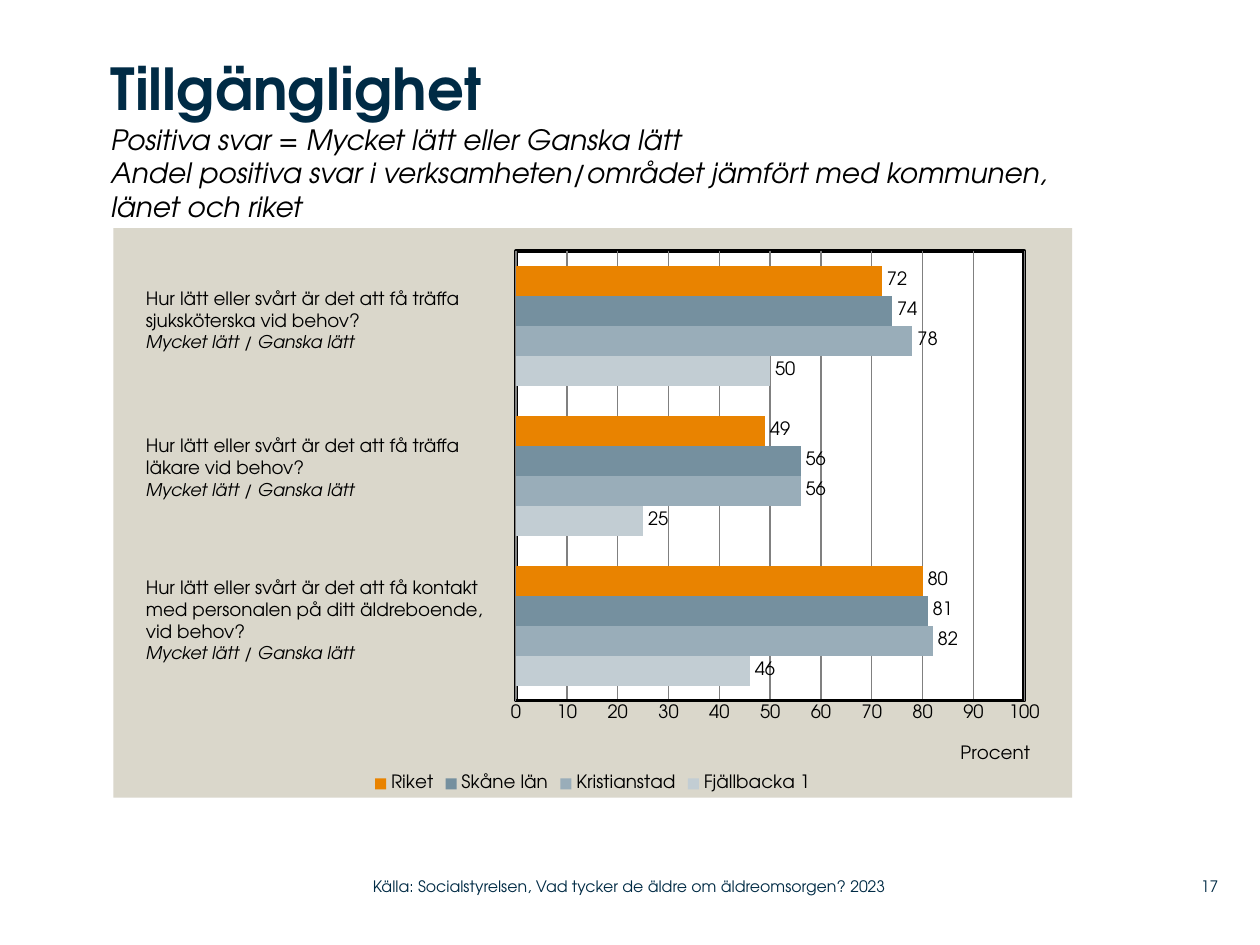
from dataclasses import dataclass

from lxml import etree
from pptx import Presentation
from pptx.chart.data import CategoryChartData
from pptx.dml.color import RGBColor
from pptx.enum.chart import XL_CHART_TYPE as ChartType
from pptx.enum.chart import XL_LABEL_POSITION as LabelPosition
from pptx.enum.chart import XL_LEGEND_POSITION as LegendPosition
from pptx.enum.chart import XL_TICK_MARK as TickMark
from pptx.enum.text import MSO_ANCHOR as Anchor
from pptx.enum.text import PP_ALIGN as Align
from pptx.oxml import parse_xml
from pptx.oxml.ns import nsdecls, qn
from pptx.util import Pt

PX = 9144  # 100 px to the inch


@dataclass(frozen=True)
class Style:
    size: float
    color: str = "000000"
    bold: bool = False
    italic: bool = False


class Theme:
    font = "TeX Gyre Adventor"
    black, white, grid, panel = "000000", "FFFFFF", "808080", "DAD7CB"
    title = Style(33, "002B45", bold=True)
    subtitle = Style(16, italic=True)
    body = Style(10.5)
    answer = Style(10, italic=True)
    footer = Style(9, "002B45")


SERIES = [
    ("Fjällbacka 1", (46, 25, 50), "C2CDD3"),
    ("Kristianstad", (82, 56, 78), "99ADB9"),
    ("Skåne län", (81, 56, 74), "75909F"),
    ("Riket", (80, 49, 72), "E98300"),
]
QUESTIONS = [
    ((16, 42, 299, 81),
     ["Hur lätt eller svårt är det att få träffa sjuksköterska vid behov?"]),
    ((16, 159, 299, 81),
     ["Hur lätt eller svårt är det att få träffa", "läkare vid behov?"]),
    ((16, 271, 301, 98),
     ["Hur lätt eller svårt är det att få kontakt",
      "med personalen på ditt äldreboende,", "vid behov?"]),
]
ANSWER = "Mycket lätt / Ganska lätt"


def rgb(color):
    return RGBColor.from_string(color)


def emu(box):
    return [length * PX for length in box]


def apply_font(font, style):
    font.name = Theme.font
    font.size = Pt(style.size)
    font.bold = style.bold
    font.italic = style.italic
    font.color.rgb = rgb(style.color)


def add_text(slide, box, lines, inset=True, anchor=Anchor.TOP, align=Align.LEFT):
    """Add a text box with one paragraph for each (text, style) pair."""
    frame = slide.shapes.add_textbox(*emu(box)).text_frame
    frame.word_wrap = True
    frame.vertical_anchor = anchor
    if not inset:
        frame.margin_left = frame.margin_right = 0
        frame.margin_top = frame.margin_bottom = 0
    frame.text = "\n".join(text for text, _ in lines)
    for paragraph, (_, style) in zip(frame.paragraphs, lines):
        paragraph.alignment = align
        for run in paragraph.runs:
            apply_font(run.font, style)


def add_heading(slide, box):
    add_text(slide, box, [
        ("Tillgänglighet", Theme.title),
        ("Positiva svar = Mycket lätt eller Ganska lätt", Theme.subtitle),
        ("Andel positiva svar i verksamheten/området jämfört med kommunen, "
         "länet och riket", Theme.subtitle),
    ], inset=False)


def fill_xml(color):
    return f'<a:solidFill><a:srgbClr val="{color}"/></a:solidFill>'


def shape_properties(fill, line):
    return parse_xml(f'<c:spPr {nsdecls("c", "a")}>{fill_xml(fill)}{line}</c:spPr>')


def manual_layout(x, y, size=None):
    """Return a c:layout placed by fractions of the chart."""
    values = {"xMode": "edge", "yMode": "edge", "x": x, "y": y}
    if size:
        values = {"layoutTarget": "inner", **values, "w": size[0], "h": size[1]}
    layout = etree.Element(qn("c:layout"))
    manual = etree.SubElement(layout, qn("c:manualLayout"))
    for name, value in values.items():
        etree.SubElement(manual, qn(f"c:{name}")).set("val", str(value))
    return layout


def set_layout(parent, layout, index):
    for old in parent.findall(qn("c:layout")):
        parent.remove(old)
    parent.insert(index, layout)


def style_areas(chart):
    """Colour the panel and the framed plot area, and place the plot."""
    chart_node = chart.element.find(qn("c:chart"))
    chart_node.addnext(shape_properties(Theme.panel, "<a:ln><a:noFill/></a:ln>"))
    plot_area = chart_node.find(qn("c:plotArea"))
    frame = f'<a:ln w="{Pt(2)}">{fill_xml(Theme.black)}</a:ln>'
    plot_area.append(shape_properties(Theme.white, frame))
    set_layout(plot_area, manual_layout(0.42, 0.04, (0.53, 0.79)), 0)


def style_axes(chart):
    chart.category_axis.visible = False
    axis = chart.value_axis
    axis.minimum_scale, axis.maximum_scale, axis.major_unit = 0, 100, 10
    axis.major_tick_mark = axis.minor_tick_mark = TickMark.NONE
    axis.format.line.color.rgb = rgb(Theme.black)
    axis.format.line.width = Pt(2)
    axis.has_major_gridlines = True
    grid_line = axis.major_gridlines.format.line
    grid_line.color.rgb = rgb(Theme.grid)
    grid_line.width = Pt(0.75)
    axis.tick_labels.number_format = "0"
    axis.tick_labels.number_format_is_linked = False
    apply_font(axis.tick_labels.font, Theme.body)
    title = axis.axis_title
    title.text_frame.text = "Procent"
    apply_font(title.text_frame.paragraphs[0].runs[0].font, Theme.body)
    set_layout(title.format.element if hasattr(title.format, "element")
               else axis._element.find(qn("c:title")), manual_layout(0.88, 0.9), 1)


def style_bars(chart):
    plot = chart.plots[0]
    plot.gap_width, plot.overlap = 100, 0
    plot.vary_by_categories = False
    for series, (_, _, color) in zip(plot.series, SERIES):
        series.format.fill.solid()
        series.format.fill.fore_color.rgb = rgb(color)
        labels = series.data_labels
        labels.show_value = True
        labels.position = LabelPosition.OUTSIDE_END
        apply_font(labels.font, Theme.body)


def add_bar_chart(slide, box):
    data = CategoryChartData()
    data.categories = ["1", "2", "3"]
    for name, values, _ in SERIES:
        data.add_series(name, values)
    chart = slide.shapes.add_chart(ChartType.BAR_CLUSTERED, *emu(box), data).chart
    chart.has_title = False
    apply_font(chart.font, Theme.body)
    chart.has_legend = True
    chart.legend.position = LegendPosition.BOTTOM
    chart.legend.include_in_layout = False
    apply_font(chart.legend.font, Theme.body)
    style_bars(chart)
    style_axes(chart)
    style_areas(chart)


def add_chart_panel(slide, box):
    """Add the chart with the questions standing in for category labels."""
    add_bar_chart(slide, box)
    left, top = box[:2]
    for (x, y, width, height), question in QUESTIONS:
        lines = [(line, Theme.body) for line in question] + [(ANSWER, Theme.answer)]
        add_text(slide, (left + x, top + y, width, height), lines)


def add_footer(slide, box):
    left, top, width, height = box
    number_width = 47
    source = "Källa: Socialstyrelsen, Vad tycker de äldre om äldreomsorgen? 2023"
    add_text(slide, (left + width - number_width, top, number_width, height),
             [("17", Theme.footer)], False, Anchor.MIDDLE, Align.RIGHT)
    add_text(slide, (left, top, 443, height),
             [(source, Theme.footer)], False, Anchor.MIDDLE)


def main():
    presentation = Presentation()
    presentation.slide_width, presentation.slide_height = emu((1000, 750))
    slide = presentation.slides.add_slide(presentation.slide_layouts[6])
    add_heading(slide, (88, 42, 777, 139))
    add_chart_panel(slide, (90, 181, 761, 452))
    add_footer(slide, (296, 689, 671, 29))
    presentation.save("out.pptx")


if __name__ == "__main__":
    main()
